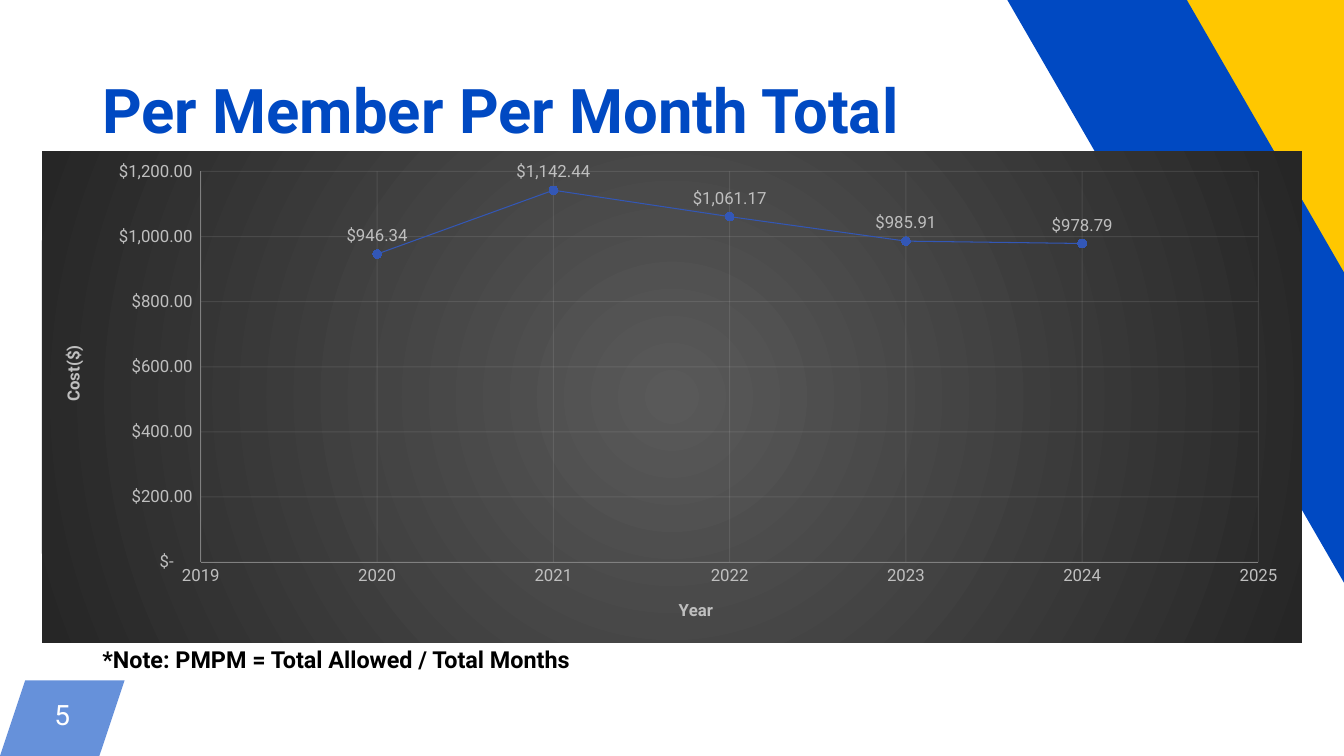
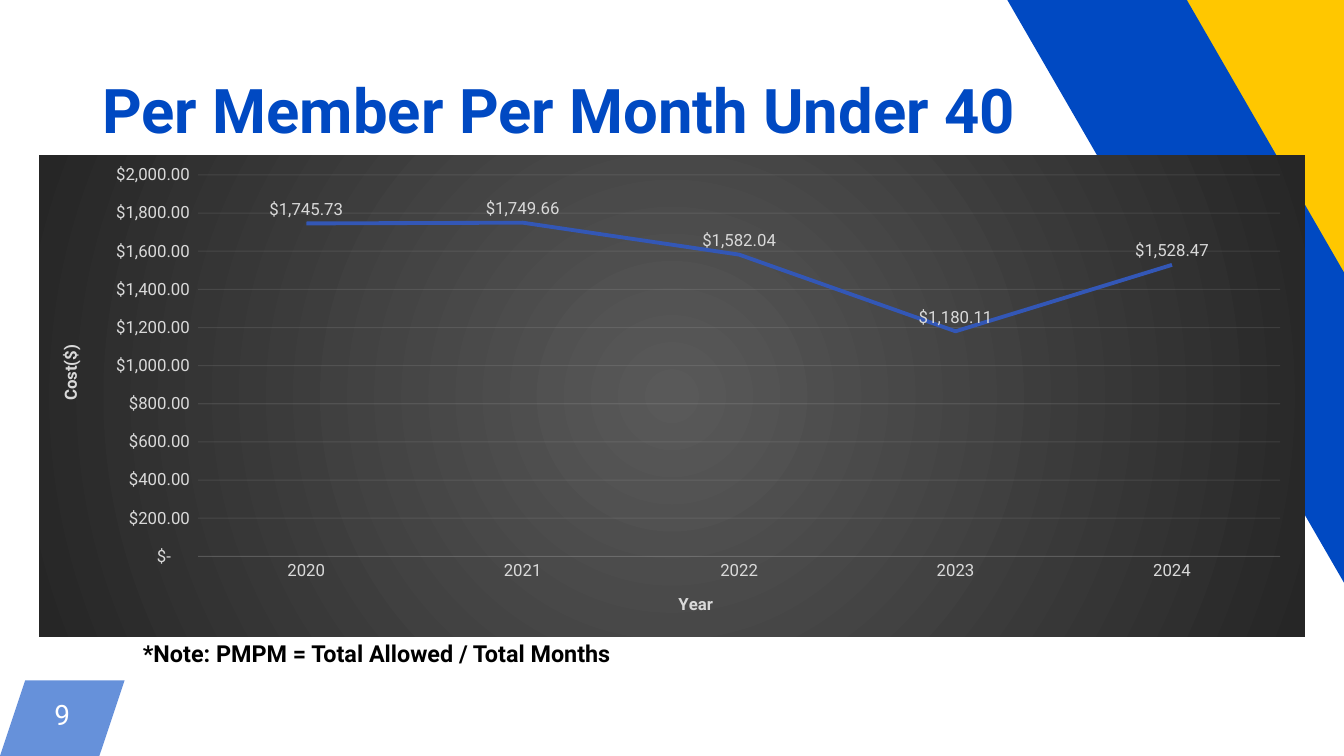
from lxml.etree import SubElement, fromstring
from pptx import Presentation
from pptx.chart.data import CategoryChartData, XyChartData
from pptx.chart.datalabel import DataLabels
from pptx.dml.color import RGBColor
from pptx.enum.chart import XL_CHART_TYPE as ChartType
from pptx.enum.chart import XL_LABEL_POSITION as LabelPosition
from pptx.enum.chart import XL_MARKER_STYLE as MarkerStyle
from pptx.enum.chart import XL_TICK_MARK as TickMark
from pptx.enum.text import MSO_ANCHOR as Anchor
from pptx.enum.text import PP_ALIGN as Align
from pptx.oxml.ns import nsdecls, qn
from pptx.util import Pt

COLORS = {
    "blue": "0049C2", "yellow": "FFC700", "white": "FFFFFF", "black": "000000",
    "series": "3357B6", "marker": "2C54BD", "grid": "F2F2F2", "axis": "808080",
    "silver": "BFBFBF", "light": "D9D9D9", "glow": "595959", "edge": "262626",
}
FONT = "Roboto"
SLIDE_SIZE = (960, 540)
YEARS = [2020, 2021, 2022, 2023, 2024]
MONEY = '_("$"* #,##0.00_);_("$"* \\(#,##0.00\\);_("$"* "-"??_);_(@_)'
NOTE = "*Note: PMPM = Total Allowed / Total Months"
STRIPES = {
    "yellow": [(754, -156), (877, -227), (1228, 386), (1105, 456)],
    "blue": [(682, -65), (778, -121), (1131, 491), (1035, 546)],
}
BADGE = [(18, 486), (89, 486), (71, 540), (0, 540)]

TOTAL = {
    "title": "Per Member Per Month Total", "page": "5", "scatter": True,
    "values": [946.34, 1142.44, 1061.17, 985.91, 978.79],
    "box": (30, 108, 900, 351), "plot": (113.5, 14.5, 755.5, 279),
    "year_at": (452.5, 317.5), "cost_at": (12, 136.5), "note_box": (66, 459.5, 692, 25),
    "ink": "silver", "top": 1200, "line_width": 0.75,
}
UNDER_40 = {
    "title": "Per Member Per Month Under 40", "page": "9", "scatter": False,
    "values": [1745.73, 1749.66, 1582.04, 1180.11, 1528.47],
    "box": (28, 111, 904, 344), "plot": (113.5, 14, 773, 272.5),
    "year_at": (454.5, 310.5), "cost_at": (12, 133), "note_box": (95, 455, 692, 25),
    "ink": "light", "top": 2000, "line_width": 2.75,
}


def rgb(name):
    """Return the named colour."""
    return RGBColor.from_string(COLORS[name])


def set_font(font, size, color, bold=False):
    """Apply the deck's type style to a font."""
    for attribute, value in {"name": FONT, "size": Pt(size), "bold": bold}.items():
        setattr(font, attribute, value)
    font.color.rgb = rgb(color)


def set_alpha(parent, percent):
    """Set the opacity of the first colour below an element."""
    color = next(parent.iter(qn("a:srgbClr")))
    SubElement(color, qn("a:alpha")).set("val", str(percent * 1000))


def draw_outline(slide, corners, color):
    """Draw a closed, filled outline through corners given in points."""
    start, *others = [(Pt(x), Pt(y)) for x, y in corners]
    builder = slide.shapes.build_freeform(*start)
    builder.add_line_segments(others, close=True)
    outline = builder.convert_to_shape()
    outline.shadow.inherit = False
    outline.fill.solid()
    outline.fill.fore_color.rgb = rgb(color)
    outline.line.fill.background()
    return outline


def draw_frame(slide, page):
    """Draw the corner stripes and the page badge."""
    for color, corners in STRIPES.items():
        draw_outline(slide, corners, color)
    badge = draw_outline(slide, BADGE, "blue")
    set_alpha(badge._element.spPr, 60)
    frame = badge.text_frame
    frame.vertical_anchor = Anchor.MIDDLE
    number = frame.paragraphs[0]
    number.text = page
    number.alignment = Align.CENTER
    number.line_spacing = Pt(17.7)
    set_font(number.runs[0].font, 20, "white")


def draw_text(slide, box, text, size, color, anchor, spacing=1.0):
    """Write one bold line in a box."""
    frame = slide.shapes.add_textbox(*map(Pt, box)).text_frame
    frame.word_wrap = True
    frame.vertical_anchor = anchor
    line = frame.paragraphs[0]
    line.text = text
    line.line_spacing = spacing
    set_font(line.runs[0].font, size, color, True)


def place(parent, box, chart_box, inner=False):
    """Fix a chart part at a box in points from the chart's corner."""
    for old in parent.findall(qn("c:layout")):
        parent.remove(old)
    layout = fromstring(f"<c:layout {nsdecls('c')}><c:manualLayout/></c:layout>")
    parent.insert(1 if parent.find(qn("c:tx")) is not None else 0, layout)
    settings = {"layoutTarget": "inner"} if inner else {}
    settings.update(xMode="edge", yMode="edge")
    extents = (chart_box[2], chart_box[3]) * 2
    settings.update({key: part / whole for key, part, whole in zip("xywh", box, extents)})
    for key, value in settings.items():
        SubElement(layout[0], qn(f"c:{key}")).set("val", str(value))


def style_line(line, color, width=0.75, alpha=100):
    """Set the colour, width and opacity of a line."""
    line.color.rgb = rgb(color)
    line.width = Pt(width)
    if alpha < 100:
        set_alpha(line._ln, alpha)


def style_axis(axis, heading, corner, data, gridded):
    """Style an axis, its grid and its heading."""
    axis.major_tick_mark = axis.minor_tick_mark = TickMark.NONE
    set_font(axis.tick_labels.font, 12, data["ink"])
    axis.has_major_gridlines = gridded
    if gridded:
        style_line(axis.major_gridlines.format.line, "grid", alpha=10)
    axis.has_title = True
    axis.axis_title.text_frame.text = heading
    run = axis.axis_title.text_frame.paragraphs[0].runs[0]
    set_font(run.font, 12, data["ink"], True)
    place(axis.axis_title._element, corner, data["box"])


def set_scale(axis, low, high, step):
    """Fix the range and step of an axis."""
    scale = {"minimum_scale": low, "maximum_scale": high, "major_unit": step}
    for attribute, value in scale.items():
        setattr(axis, attribute, value)


def fill_background(chart):
    """Give the chart a round dark gradient without a border."""
    stops = "".join(
        f'<a:gs pos="{position}"><a:srgbClr val="{COLORS[color]}"/></a:gs>'
        for position, color in ((0, "glow"), (100000, "edge")))
    background = fromstring(
        f'<c:spPr {nsdecls("c", "a")}><a:gradFill><a:gsLst>{stops}</a:gsLst>'
        '<a:path path="circle"><a:fillToRect l="50000" t="50000" r="50000" b="50000"/>'
        '</a:path></a:gradFill><a:ln><a:noFill/></a:ln></c:spPr>')
    chart._chartSpace.find(qn("c:chart")).addnext(background)


def style_series(series, data):
    """Style the cost line, its markers and its labels."""
    style_line(series.format.line, "series", data["line_width"])
    if data["scatter"]:
        series.marker.style = MarkerStyle.CIRCLE
        series.marker.size = 6
        series.marker.format.fill.solid()
        series.marker.format.fill.fore_color.rgb = rgb("marker")
        style_line(series.marker.format.line, "series")
    else:
        series.marker.style = MarkerStyle.NONE
        series.smooth = False
    labels = DataLabels(series._element.get_or_add_dLbls())
    settings = {"show_value": True, "position": LabelPosition.ABOVE,
                "number_format": MONEY, "number_format_is_linked": False}
    for attribute, value in settings.items():
        setattr(labels, attribute, value)
    set_font(labels.font, 12, data["ink"])


def cost_data(data):
    """Return the chart type and the yearly costs."""
    if data["scatter"]:
        costs = XyChartData()
        series = costs.add_series("Series 1")
        for year, cost in zip(YEARS, data["values"]):
            series.add_data_point(year, cost)
        return ChartType.XY_SCATTER_LINES, costs
    costs = CategoryChartData()
    costs.categories = [str(year) for year in YEARS]
    costs.add_series("Series 1", data["values"])
    return ChartType.LINE, costs


def draw_chart(slide, data):
    """Draw the yearly cost chart in its box."""
    kind, costs = cost_data(data)
    chart = slide.shapes.add_chart(kind, *map(Pt, data["box"]), costs).chart
    chart.has_title = chart.has_legend = False
    set_font(chart.font, 12, "black")
    chart.plots[0].vary_by_categories = False
    fill_background(chart)
    place(chart._chartSpace.chart.plotArea, data["plot"], data["box"], inner=True)
    years, dollars = chart.category_axis, chart.value_axis
    style_axis(years, "Year", data["year_at"], data, data["scatter"])
    style_axis(dollars, "Cost($)", data["cost_at"], data, True)
    turned = next(dollars.axis_title._element.iter(qn("a:bodyPr")))
    turned.set("rot", "-5400000")
    turned.set("vert", "horz")
    set_scale(dollars, 0, data["top"], 200)
    dollars.tick_labels.number_format = MONEY
    dollars.tick_labels.number_format_is_linked = False
    if data["scatter"]:
        set_scale(years, YEARS[0] - 1, YEARS[-1] + 1, 1)
        years.tick_labels.number_format = "General"
        years.tick_labels.number_format_is_linked = False
        for axis in (years, dollars):
            style_line(axis.format.line, "axis")
    else:
        style_line(years.format.line, "grid", alpha=10)
        dollars.format.line.fill.background()
    style_series(chart.plots[0].series[0], data)


def build_slide(deck, data):
    """Build one cost slide."""
    slide = deck.slides.add_slide(deck.slide_layouts[6])
    draw_frame(slide, data["page"])
    draw_text(slide, (66, 29, 828, 104), data["title"], 44, "blue", Anchor.MIDDLE, 0.9)
    draw_text(slide, data["note_box"], NOTE, 16.7, "black", Anchor.BOTTOM)
    draw_chart(slide, data)


def main():
    """Build and save the deck."""
    deck = Presentation()
    deck.slide_width, deck.slide_height = map(Pt, SLIDE_SIZE)
    for data in (TOTAL, UNDER_40):
        build_slide(deck, data)
    deck.save("out.pptx")


if __name__ == "__main__":
    main()
